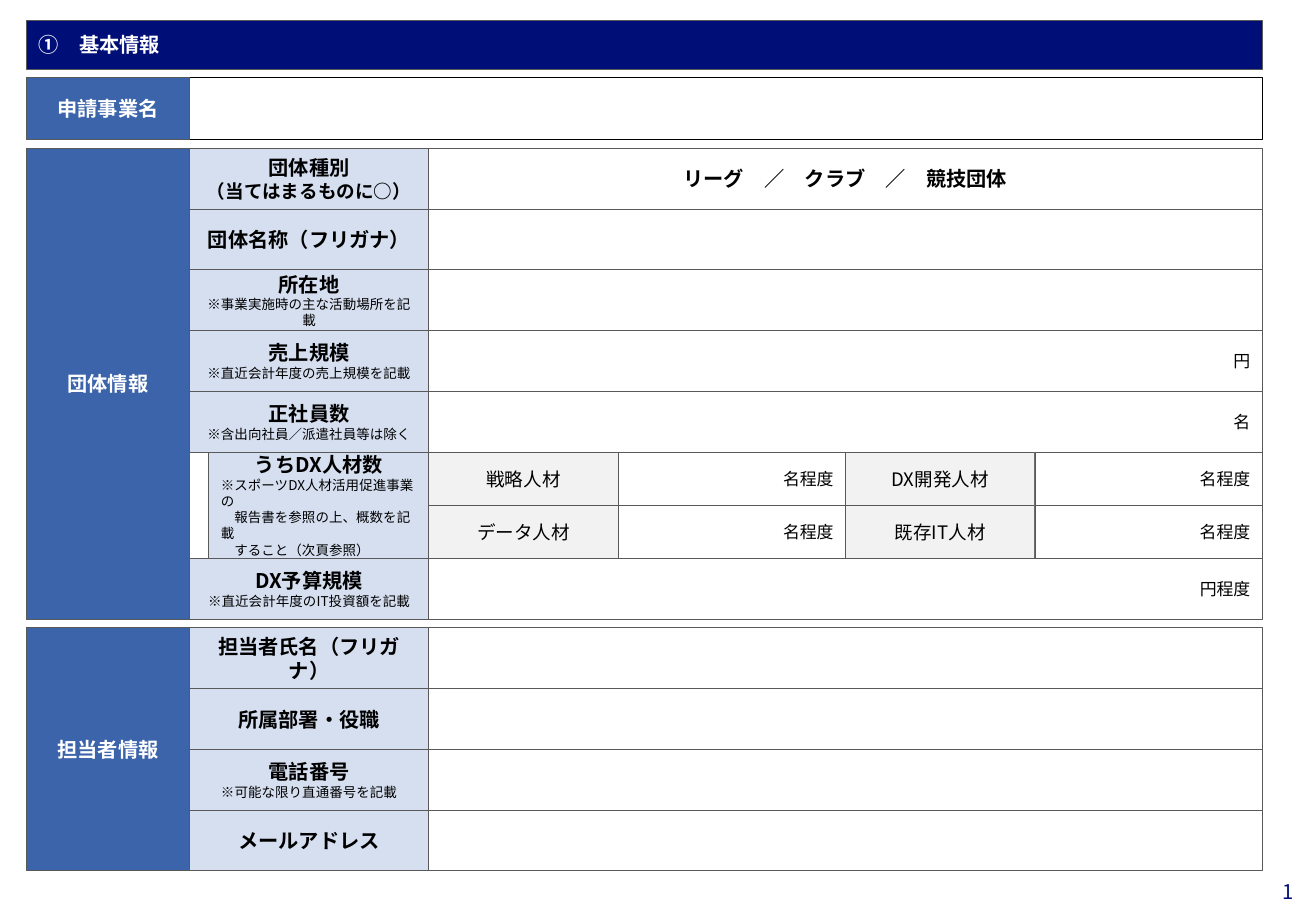
from lxml import etree
from pptx import Presentation
from pptx.dml.color import RGBColor
from pptx.enum import shapes, text
from pptx.oxml import ns
from pptx.util import Pt

# Content: each row holds a label, its small notes and the text of its answer box
HEADING = "①\u3000基本情報".replace("\u3000", "　")
PROJECT = "申請事業名"
ORGANIZATION = "団体情報"
ORGANIZATION_ROWS = [
    ("団体種別\v（当てはまるものに○）", [], "リーグ　／　クラブ　／　競技団体"),
    ("団体名称（フリガナ）", [], ""),
    ("所在地", ["※事業実施時の主な活動場所を記載"], ""),
    ("売上規模", ["※直近会計年度の売上規模を記載"], "円"),
    ("正社員数", ["※含出向社員／派遣社員等は除く"], "名"),
]
STAFF = ("うちDX人材数", ["※スポーツDX人材活用促進事業の",
                      "　報告書を参照の上、概数を記載",
                      "　すること（次頁参照）"])
STAFF_TYPES = [["戦略人材", "DX開発人材"], ["データ人材", "既存IT人材"]]
STAFF_UNIT = "名程度"
BUDGET_ROWS = [("DX予算規模", ["※直近会計年度のIT投資額を記載"], "円程度")]
CONTACT = "担当者情報"
CONTACT_ROWS = [
    ("担当者氏名（フリガナ）", [], ""),
    ("所属部署・役職", [], ""),
    ("電話番号", ["※可能な限り直通番号を記載"], ""),
    ("メールアドレス", [], ""),
]

# Style
FONT = "Noto Sans CJK JP"
NAVY = RGBColor(0x00, 0x0F, 0x78)
BLUE = RGBColor(0x3C, 0x64, 0xAA)
PALE = RGBColor(0xD6, 0xDF, 0xF0)
LIGHT_GRAY = RGBColor(0xF2, 0xF2, 0xF2)
GRAY = RGBColor(0x59, 0x59, 0x59)
BLACK = RGBColor(0, 0, 0)
WHITE = RGBColor(0xFF, 0xFF, 0xFF)
LEFT, CENTER, RIGHT = text.PP_ALIGN.LEFT, text.PP_ALIGN.CENTER, text.PP_ALIGN.RIGHT

# Layout in points
SECTION_X, LABEL_X, ANSWER_X, RIGHT_X = 15.8, 112.3, 254.2, 748.1
HEADING_Y, HEADING_HEIGHT = 12.2, 28.8
PROJECT_Y, PROJECT_HEIGHT = 46, 36.5
ORGANIZATION_Y, CONTACT_Y = 88, 372.2
ROW_HEIGHT, STAFF_HEIGHT = 36, 63
STAFF_INDENT, STAFF_NAME_WIDTH = 11.5, 112.3

presentation = Presentation()
presentation.slide_width, presentation.slide_height = Pt(780), Pt(540)
slide = presentation.slides.add_slide(presentation.slide_layouts[5])


def format_run(run, size, color, bold):
    run.font.size, run.font.bold, run.font.name = Pt(size), bold, FONT
    run.font.color.rgb = color
    etree.SubElement(run.font._element, ns.qn("a:ea")).set("typeface", FONT)


def write(shape, lines, color=BLACK):
    """Each line is (text, size, bold, alignment)."""
    frame = shape.text_frame
    frame.word_wrap = True
    frame.auto_size = text.MSO_AUTO_SIZE.NONE
    frame.vertical_anchor = text.MSO_ANCHOR.MIDDLE
    frame.text = "\n".join(line[0] for line in lines)
    for paragraph, (_, size, bold, alignment) in zip(frame.paragraphs, lines):
        paragraph.alignment = alignment
        for index, run in enumerate(paragraph.runs):
            format_run(run, size - index, color, bold)


def place(shape, left, top, right, height):
    shape.left, shape.top = Pt(left), Pt(top)
    shape.width, shape.height = Pt(right - left), Pt(height)


def paint(shape, fill, line=GRAY):
    shape.fill.solid()
    shape.fill.fore_color.rgb = fill
    shape.line.color.rgb = line
    shape.line.width = Pt(0.5)


def add_box(left, top, right, height, fill, lines=(), color=BLACK, line=GRAY):
    box = slide.shapes.add_shape(shapes.MSO_SHAPE.RECTANGLE, 0, 0, 0, 0)
    box.shadow.inherit = False
    place(box, left, top, right, height)
    paint(box, fill, line)
    if lines:
        write(box, lines, color)


def add_section(name, top, height):
    add_box(SECTION_X, top, LABEL_X, height, BLUE, [(name, 12, True, CENTER)], WHITE)


def add_label(label, notes, left, top, height, note_alignment=CENTER):
    lines = [(label, 12, True, CENTER)]
    lines += [(note, 8, False, note_alignment) for note in notes]
    add_box(left, top, ANSWER_X, height, PALE, lines)


def add_rows(rows, top):
    for label, notes, answer in rows:
        add_label(label, notes, LABEL_X, top, ROW_HEIGHT)
        style = (12, True, CENTER) if "／" in answer else (10, False, RIGHT)
        add_box(ANSWER_X, top, RIGHT_X, ROW_HEIGHT, WHITE,
                [(answer, *style)] if answer else [])
        top += ROW_HEIGHT
    return top


# Heading bar
title = slide.shapes.title
place(title, SECTION_X, HEADING_Y, RIGHT_X, HEADING_HEIGHT)
paint(title, NAVY)
write(title, [(HEADING, 12, True, LEFT)], WHITE)

# Project name
add_box(LABEL_X, PROJECT_Y, RIGHT_X, PROJECT_HEIGHT, WHITE, line=BLACK)
add_section(PROJECT, PROJECT_Y, PROJECT_HEIGHT)

# Organization, with the staff grid between its rows
staff_y = add_rows(ORGANIZATION_ROWS, ORGANIZATION_Y)
add_label(*STAFF, LABEL_X + STAFF_INDENT, staff_y, STAFF_HEIGHT, LEFT)
cell_height = STAFF_HEIGHT / len(STAFF_TYPES)
pair_width = (RIGHT_X - ANSWER_X) / len(STAFF_TYPES[0])
for row, names in enumerate(STAFF_TYPES):
    for column, name in enumerate(names):
        left, top = ANSWER_X + column * pair_width, staff_y + row * cell_height
        middle = left + STAFF_NAME_WIDTH
        add_box(left, top, middle, cell_height, LIGHT_GRAY, [(name, 11, False, CENTER)])
        add_box(middle, top, left + pair_width, cell_height, WHITE,
                [(STAFF_UNIT, 10, False, RIGHT)])
organization_end = add_rows(BUDGET_ROWS, staff_y + STAFF_HEIGHT)
add_section(ORGANIZATION, ORGANIZATION_Y, organization_end - ORGANIZATION_Y)

# Contact person
contact_end = add_rows(CONTACT_ROWS, CONTACT_Y)
add_section(CONTACT, CONTACT_Y, contact_end - CONTACT_Y)

# Slide number, as a live field
number = slide.shapes.add_textbox(Pt(741.6), Pt(521.3), Pt(38.2), Pt(13.7))
frame = number.text_frame
frame.margin_left = frame.margin_top = frame.margin_bottom = 0
frame.margin_right = Pt(13)
write(number, [("1", 12, False, RIGHT)], NAVY)
field = frame.paragraphs[0].runs[0]._r
field.tag = ns.qn("a:fld")
field.set("id", "{B6F15528-21DE-4FAA-801E-634DDDAF4B2B}")
field.set("type", "slidenum")

presentation.save("out.pptx")
